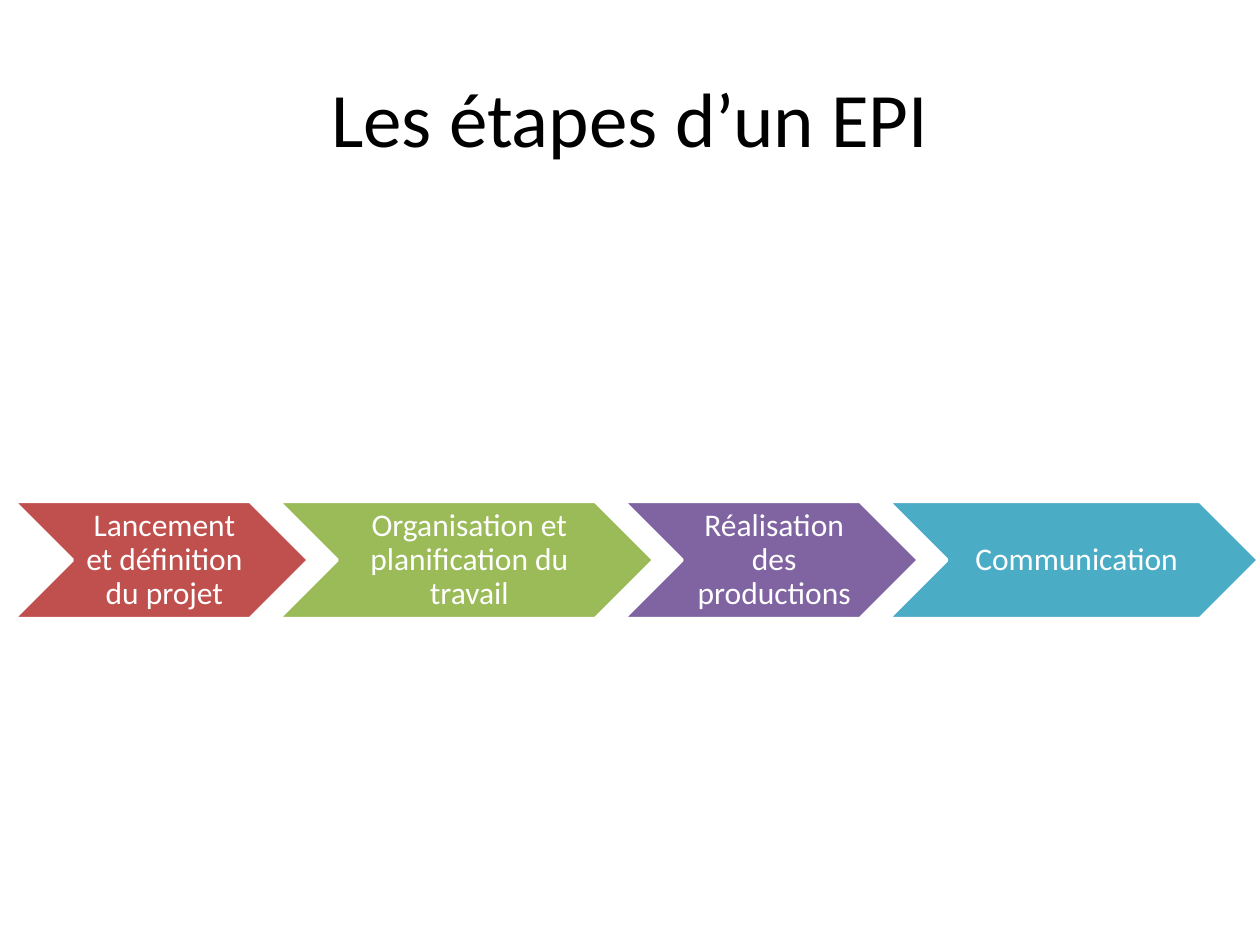
from dataclasses import dataclass

import pptx
import pptx.dml.color
import pptx.enum.shapes
import pptx.enum.text
import pptx.util
from pptx.util import Inches


@dataclass(frozen=True)
class Theme:
    font: str = "Calibri"
    title_size: int = 44
    step_size: int = 18
    dark: str = "000000"
    light: str = "FFFFFF"
    red: str = "C0504D"
    green: str = "9BBB59"
    purple: str = "8064A2"
    blue: str = "4BACC6"


THEME = Theme()

# Process steps: wording, chevron width in inches, colour
STEPS = [
    ("Lancement et définition du projet", 2.34, THEME.red),
    ("Organisation et planification du travail", 2.98, THEME.green),
    ("Réalisation des productions", 2.34, THEME.purple),
    ("Communication", 2.94, THEME.blue),
]
STEPS_LEFT, STEPS_TOP, STEP_HEIGHT = 0.11, 3.98, 0.93
STEP_OVERLAP = 0.24


def rgb(value):
    return pptx.dml.color.RGBColor.from_string(value)


def write_text(frame, text, size, color):
    frame.text = text
    frame.word_wrap = True
    frame.vertical_anchor = pptx.enum.text.MSO_ANCHOR.MIDDLE
    paragraph = frame.paragraphs[0]
    paragraph.alignment = pptx.enum.text.PP_ALIGN.CENTER
    paragraph.font.name = THEME.font
    paragraph.font.size = pptx.util.Pt(size)
    paragraph.font.color.rgb = rgb(color)
    return paragraph


def add_title(slide, text):
    title = slide.shapes.title
    title.left, title.top = Inches(0.5), Inches(0.3)
    title.width, title.height = Inches(9), Inches(1.25)
    write_text(title.text_frame, text, THEME.title_size, THEME.dark)


def add_step(process, text, left, width, color):
    step = process.shapes.add_shape(
        pptx.enum.shapes.MSO_SHAPE.CHEVRON,
        Inches(left), Inches(STEPS_TOP), Inches(width), Inches(STEP_HEIGHT))
    step.shadow.inherit = False
    step.fill.solid()
    step.fill.fore_color.rgb = rgb(color)
    step.line.color.rgb = rgb(THEME.light)
    step.line.width = pptx.util.Pt(2)

    frame = step.text_frame
    frame.margin_left = Inches(0.08)
    frame.margin_top = frame.margin_right = frame.margin_bottom = Inches(0.03)
    label = write_text(frame, text, THEME.step_size, THEME.light)
    label.line_spacing = 0.9


def add_process(slide):
    process = slide.shapes.add_group_shape()
    left = STEPS_LEFT
    for text, width, color in STEPS:
        add_step(process, text, left, width, color)
        left += width - STEP_OVERLAP


def main():
    deck = pptx.Presentation()
    deck.slide_width, deck.slide_height = Inches(10), Inches(7.5)
    slide = deck.slides.add_slide(deck.slide_layouts.get_by_name("Title Only"))

    # Heading
    add_title(slide, "Les étapes d’un EPI")

    # Row of chevrons
    add_process(slide)

    deck.save("out.pptx")


if __name__ == "__main__":
    main()
